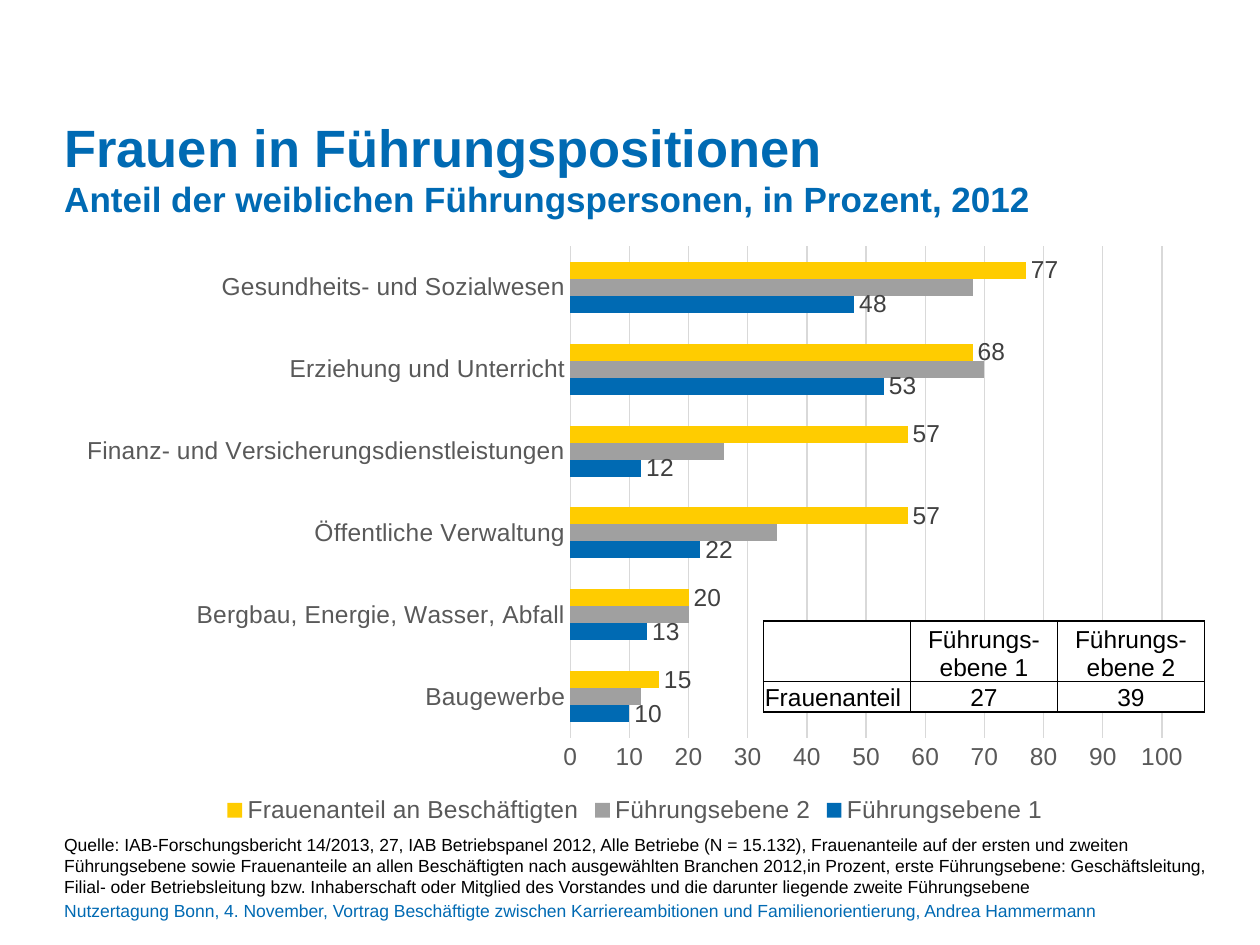
from lxml import etree
from pptx import Presentation
from pptx.chart.data import CategoryChartData
from pptx.dml.color import RGBColor
from pptx.enum.chart import XL_CHART_TYPE, XL_LABEL_POSITION, XL_LEGEND_POSITION, XL_TICK_MARK
from pptx.enum.text import MSO_ANCHOR, PP_ALIGN
from pptx.oxml.ns import qn
from pptx.util import Inches, Pt

BAR_CLUSTERED = XL_CHART_TYPE.BAR_CLUSTERED
OUTSIDE_END = XL_LABEL_POSITION.OUTSIDE_END
LEGEND_BOTTOM = XL_LEGEND_POSITION.BOTTOM
NO_TICK = XL_TICK_MARK.NONE
TOP, BOTTOM = MSO_ANCHOR.TOP, MSO_ANCHOR.BOTTOM
LEFT, CENTER = PP_ALIGN.LEFT, PP_ALIGN.CENTER

BLUE = RGBColor(0x00, 0x6A, 0xB3)
GREY = RGBColor(0xA0, 0xA0, 0xA0)
YELLOW = RGBColor(0xFF, 0xCC, 0x00)
BLACK = RGBColor(0x00, 0x00, 0x00)
WHITE = RGBColor(0xFF, 0xFF, 0xFF)
AXIS_TEXT = RGBColor(0x59, 0x59, 0x59)
LABEL_TEXT = RGBColor(0x40, 0x40, 0x40)
GRID = RGBColor(0xD9, 0xD9, 0xD9)
FONT = "Arial"

MARGIN, CONTENT_WIDTH = Inches(0.51), Inches(9.06)

CATEGORIES = [
    "Baugewerbe",
    "Bergbau, Energie, Wasser, Abfall",
    "Öffentliche Verwaltung",
    "Finanz- und Versicherungsdienstleistungen",
    "Erziehung und Unterricht",
    "Gesundheits- und Sozialwesen",
]
# name, values, colour, whether the values are labelled
SERIES = [
    ("Führungsebene 1", (10, 13, 22, 12, 53, 48), BLUE, True),
    ("Führungsebene 2", (12, 20, 35, 26, 70, 68), GREY, False),
    ("Frauenanteil an Beschäftigten", (15, 20, 57, 57, 68, 77), YELLOW, True),
]
TABLE_ROWS = [
    ("", "Führungs-ebene 1", "Führungs-\nebene 2"),
    ("Frauenanteil", "27", "39"),
]
SOURCE = (
    "Quelle: IAB-Forschungsbericht 14/2013, 27, IAB Betriebspanel 2012, Alle Betriebe "
    "(N = 15.132), Frauenanteile auf der ersten und zweiten Führungsebene sowie "
    "Frauenanteile an allen Beschäftigten nach ausgewählten Branchen 2012,in Prozent, "
    "erste Führungsebene: Geschäftsleitung, Filial- oder Betriebsleitung bzw. "
    "Inhaberschaft oder Mitglied des Vorstandes und die darunter liegende zweite "
    "Führungsebene"
)
EVENT = (
    "Nutzertagung Bonn, 4. November, Vortrag Beschäftigte zwischen "
    "Karriereambitionen und Familienorientierung, Andrea Hammermann"
)


def style_font(font, size, color, bold=False):
    font.name, font.size, font.bold = FONT, Pt(size), bold
    font.color.rgb = color


def clear_frame(text_frame):
    """Wrap text from the top left corner without margins."""
    text_frame.word_wrap = True
    text_frame.vertical_anchor = TOP
    text_frame.margin_left = text_frame.margin_right = 0
    text_frame.margin_top = text_frame.margin_bottom = 0


def place_title(slide, left, top, width, height):
    title = slide.shapes.title
    title.left, title.top, title.width, title.height = left, top, width, height
    clear_frame(title.text_frame)
    title.text_frame.text = (
        "Frauen in Führungspositionen\v"
        "Anteil der weiblichen Führungspersonen, in Prozent, 2012"
    )
    paragraph = title.text_frame.paragraphs[0]
    paragraph.alignment = LEFT
    paragraph.line_spacing = 1.0
    for run, size in zip(paragraph.runs, (30, 20)):
        style_font(run.font, size, BLUE, bold=True)


def add_note(slide, text, color, left, top, width, height):
    text_frame = slide.shapes.add_textbox(left, top, width, height).text_frame
    clear_frame(text_frame)
    text_frame.text = text
    paragraph = text_frame.paragraphs[0]
    paragraph.line_spacing = Pt(12)
    style_font(paragraph.runs[0].font, 10, color)


def style_axes(chart):
    for axis in (chart.category_axis, chart.value_axis):
        axis.major_tick_mark = axis.minor_tick_mark = NO_TICK
        style_font(axis.tick_labels.font, 14, AXIS_TEXT)
    category_line = chart.category_axis.format.line
    category_line.color.rgb, category_line.width = GRID, Pt(0.75)

    value_axis = chart.value_axis
    value_axis.minimum_scale, value_axis.maximum_scale = 0, 100
    value_axis.major_unit = 10
    value_axis.format.line.fill.background()
    value_axis.has_major_gridlines = True
    grid_line = value_axis.major_gridlines.format.line
    grid_line.color.rgb, grid_line.width = GRID, Pt(0.75)


def add_share_chart(slide, left, top, width, height):
    data = CategoryChartData()
    data.categories = CATEGORIES
    for name, values, _, _ in SERIES:
        data.add_series(name, values)
    chart = slide.shapes.add_chart(BAR_CLUSTERED, left, top, width, height, data).chart
    style_font(chart.font, 14, BLACK)
    chart.has_title = False
    chart.has_legend = True
    chart.legend.position = LEGEND_BOTTOM
    chart.legend.include_in_layout = False
    style_font(chart.legend.font, 14, AXIS_TEXT)
    style_axes(chart)

    plot = chart.plots[0]
    plot.gap_width, plot.overlap = 182, 0
    plot.vary_by_categories = False
    for series, (_, _, color, labelled) in zip(plot.series, SERIES):
        series.format.fill.solid()
        series.format.fill.fore_color.rgb = color
        series.invert_if_negative = False
        if labelled:
            labels = series.data_labels
            labels.show_value = True
            labels.position = OUTSIDE_END
            style_font(labels.font, 14, LABEL_TEXT)


def add_borders(cell):
    """Draw a black line of one point on each side of the cell."""
    properties = cell._tc.get_or_add_tcPr()
    for index, side in enumerate(("a:lnL", "a:lnR", "a:lnT", "a:lnB")):
        line = etree.Element(qn(side), w=str(Pt(1)))
        fill = etree.SubElement(line, qn("a:solidFill"))
        etree.SubElement(fill, qn("a:srgbClr"), val=str(BLACK))
        properties.insert(index, line)


def add_level_table(slide, left, top, width, height):
    table = slide.shapes.add_table(2, 3, left, top, width, height).table
    table.first_row = table.horz_banding = False
    for row, row_height in zip(table.rows, (0.45, 0.22)):
        row.height = Inches(row_height)
    for row_index, texts in enumerate(TABLE_ROWS):
        for column_index, text in enumerate(texts):
            cell = table.cell(row_index, column_index)
            cell.fill.solid()
            cell.fill.fore_color.rgb = WHITE
            add_borders(cell)
            cell.vertical_anchor = BOTTOM
            cell.margin_left = cell.margin_right = cell.margin_top = Inches(0.01)
            cell.margin_bottom = 0
            cell.text_frame.text = text
            for paragraph in cell.text_frame.paragraphs:
                paragraph.alignment = CENTER if column_index else LEFT
                style_font(paragraph.font, 14, BLACK)
                for run in paragraph.runs:
                    style_font(run.font, 14, BLACK)


def main():
    presentation = Presentation()
    presentation.slide_width, presentation.slide_height = Inches(10), Inches(7.5)
    slide = presentation.slides.add_slide(presentation.slide_layouts[5])
    add_share_chart(slide, MARGIN, Inches(1.86), CONTENT_WIDTH, Inches(4.72))
    place_title(slide, MARGIN, Inches(0.91), CONTENT_WIDTH, Inches(0.84))
    add_note(slide, SOURCE, BLACK, MARGIN, Inches(6.62), CONTENT_WIDTH, Inches(0.2))
    add_level_table(slide, Inches(6.06), Inches(4.93), Inches(3.5), Inches(0.67))
    add_note(slide, EVENT, BLUE, MARGIN, Inches(7.14), Inches(8.51), Inches(0.22))
    presentation.save("out.pptx")


if __name__ == "__main__":
    main()
